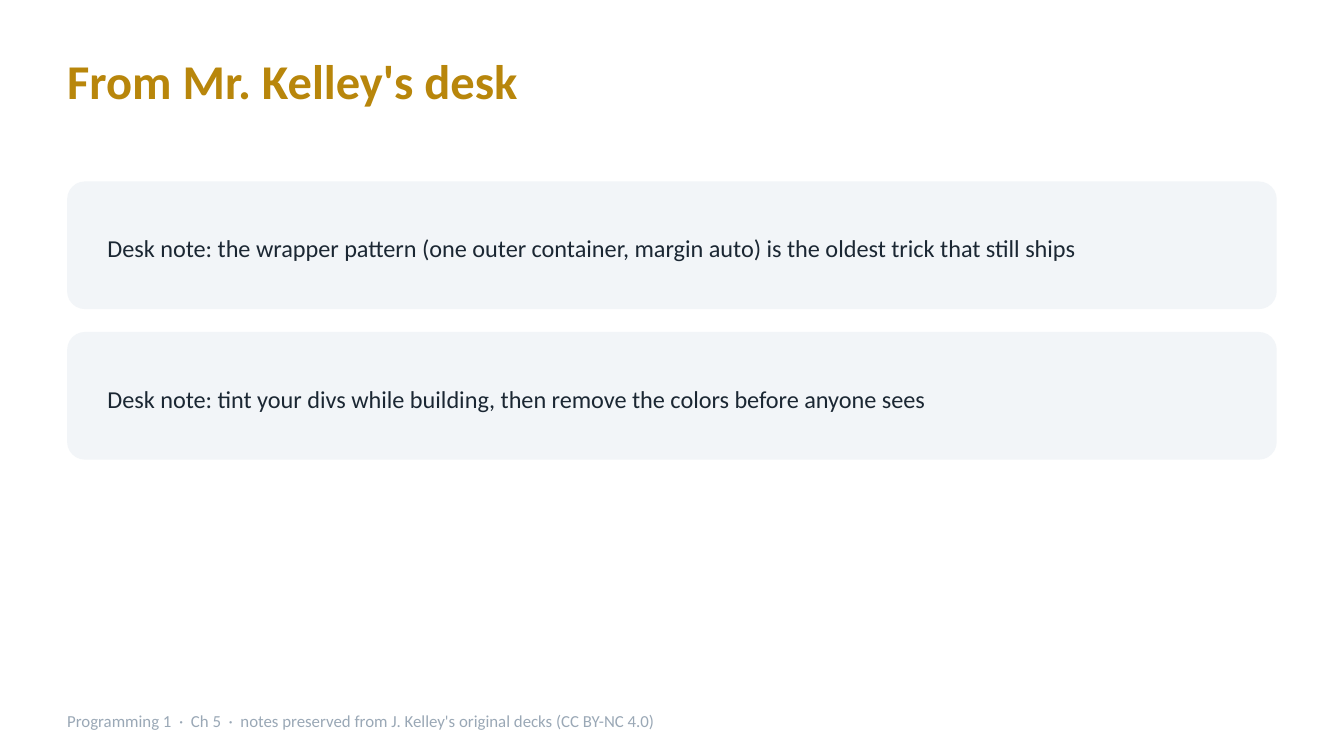
from pptx import Presentation
from pptx.dml.color import RGBColor
from pptx.enum.shapes import MSO_SHAPE as Shape
from pptx.enum.text import MSO_ANCHOR as Anchor, MSO_AUTO_SIZE as AutoSize
from pptx.util import Emu, Pt

PX = 4572  # 200 px to the inch
COLORS = {
    "background": "FFFFFF",
    "title": "B8860B",
    "card": "F2F5F8",
    "body": "1B2733",
    "footer": "9AA8B6",
}


def px(*lengths):
    return [Emu(length * PX) for length in lengths]


def add_text(text, left, top, width, height, size, color, bold=False, anchor=Anchor.TOP):
    box = slide.shapes.add_textbox(*px(left, top, width, height))
    frame = box.text_frame
    frame.word_wrap = True
    frame.auto_size = AutoSize.SHAPE_TO_FIT_TEXT
    frame.vertical_anchor = anchor
    frame.margin_left = frame.margin_right = frame.margin_top = frame.margin_bottom = 0
    para = frame.paragraphs[0]
    para.space_after = Pt(4)
    span = para.add_run()
    span.text = text
    span.font.name = "Calibri"
    span.font.size = Pt(size)
    span.font.bold = bold
    span.font.color.rgb = RGBColor.from_string(COLORS[color])


deck = Presentation()
deck.slide_width, deck.slide_height = px(2000, 1125)
slide = deck.slides.add_slide(deck.slide_layouts[6])
slide.background.fill.solid()
slide.background.fill.fore_color.rgb = RGBColor.from_string(COLORS["background"])

# Title
add_text("From Mr. Kelley's desk", 100, 76, 1800, 120, size=26, color="title", bold=True)

# Note cards
notes = [
    "Desk note: the wrapper pattern (one outer container, margin auto) is the oldest trick that still ships",
    "Desk note: tint your divs while building, then remove the colors before anyone sees",
]
for index, note in enumerate(notes):
    top = 270 + index * 224
    card = slide.shapes.add_shape(Shape.ROUNDED_RECTANGLE, *px(100, top, 1800, 190))
    card.adjustments[0] = 0.14
    card.shadow.inherit = False
    card.fill.solid()
    card.fill.fore_color.rgb = RGBColor.from_string(COLORS["card"])
    card.line.fill.background()
    add_text(note, 160, top + 24, 1680, 150, size=13, color="body", anchor=Anchor.MIDDLE)

# Footer
add_text("Programming 1  ·  Ch 5  ·  notes preserved from J. Kelley's original decks (CC BY-NC 4.0)",
         100, 1058, 1600, 50, size=9, color="footer")

deck.save("out.pptx")
